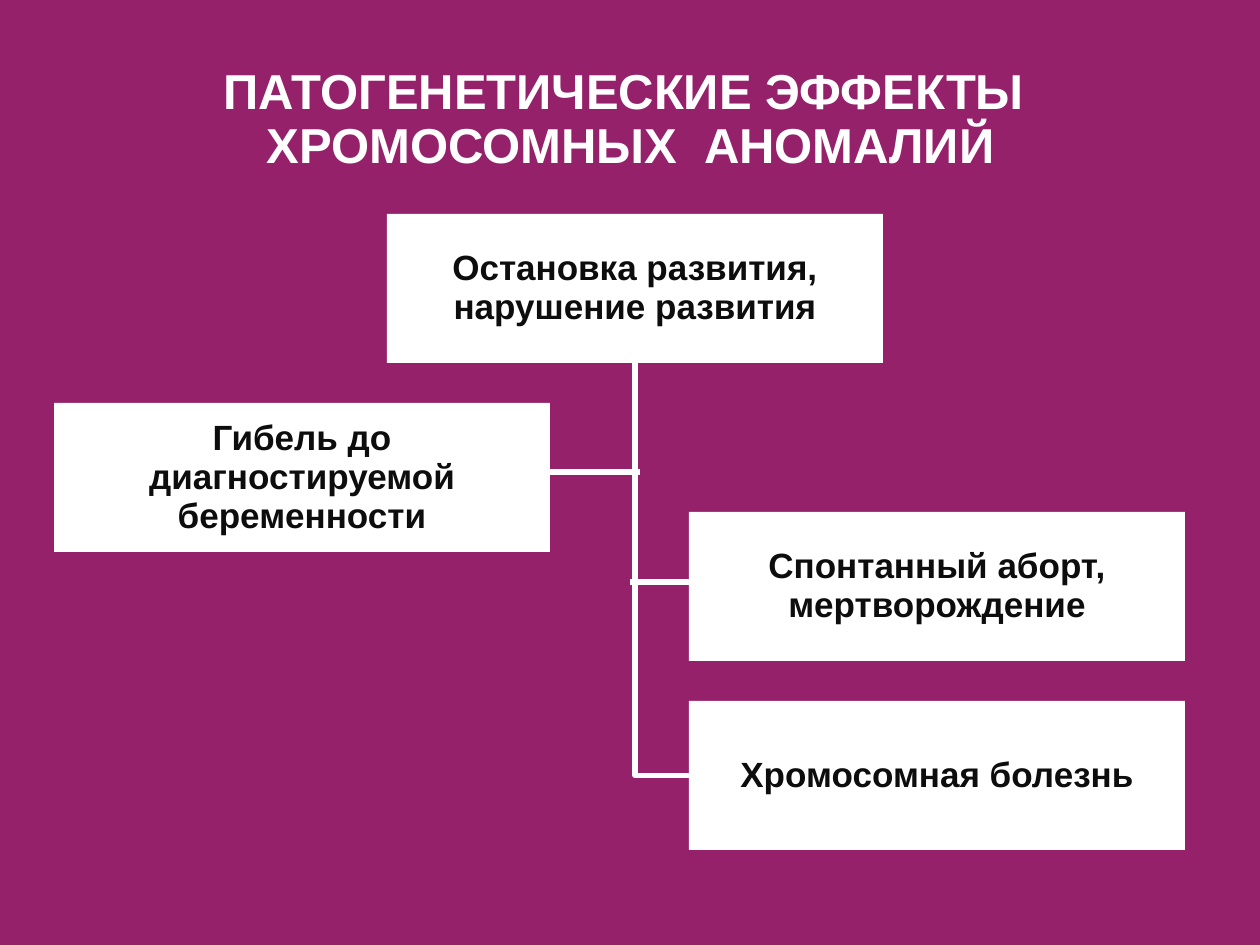
import pptx
import pptx.util
import pptx.dml.color
import pptx.enum.shapes
import pptx.enum.text
import pptx.oxml.ns
import pptx.oxml.xmlchemy

PX = 914400 // 126
COLORS = {"background": "96216B", "light": "FFFFFF", "text": "0D0D0D"}
BOX_WIDTH, BOX_HEIGHT = 496, 149


def px(length):
    return pptx.util.Emu(length * PX)


def rgb(name):
    return pptx.dml.color.RGBColor.from_string(COLORS[name])


class Diagram:
    font_name = "Arial"
    line_spacing = 0.93
    line_width = pptx.util.Pt(3)

    def __init__(self, slide):
        self.slide = slide
        fill = slide.background.fill
        fill.solid()
        fill.fore_color.rgb = rgb("background")

    def format(self, paragraph, size, color):
        paragraph.alignment = pptx.enum.text.PP_ALIGN.CENTER
        paragraph.line_spacing = self.line_spacing
        paragraph.font.name = self.font_name
        paragraph.font.size = pptx.util.Pt(size)
        paragraph.font.bold = True
        paragraph.font.color.rgb = rgb(color)

    def title(self, text, left, top, width, height):
        heading = self.slide.shapes.title
        heading.left, heading.top = px(left), px(top)
        heading.width, heading.height = px(width), px(height)
        frame = heading.text_frame
        frame.text = text
        frame.word_wrap = False
        frame.auto_size = pptx.enum.text.MSO_AUTO_SIZE.SHAPE_TO_FIT_TEXT
        frame.vertical_anchor = pptx.enum.text.MSO_ANCHOR.TOP
        for paragraph in frame.paragraphs:
            self.format(paragraph, 28, "light")

    def box(self, text, left, top):
        outcome = self.slide.shapes.add_shape(
            pptx.enum.shapes.MSO_SHAPE.RECTANGLE,
            px(left), px(top), px(BOX_WIDTH), px(BOX_HEIGHT))
        outcome.shadow.inherit = False
        outcome.fill.solid()
        outcome.fill.fore_color.rgb = rgb("light")
        outcome.line.fill.background()
        frame = outcome.text_frame
        frame.text = text
        frame.word_wrap = True
        frame.vertical_anchor = pptx.enum.text.MSO_ANCHOR.MIDDLE
        paragraph = frame.paragraphs[0]
        self.format(paragraph, 20, "text")
        paragraph.space_after = pptx.util.Pt(10)
        return outcome

    def connector(self, kind, start_x, start_y, end_x, end_y):
        link = self.slide.shapes.add_connector(kind, start_x, start_y, end_x, end_y)
        link.line.color.rgb = rgb("light")
        link.line.width = self.line_width
        link.element.spPr.append(pptx.oxml.xmlchemy.OxmlElement("a:effectLst"))
        return link

    def branch(self, start_x, end_x, y):
        self.connector(pptx.enum.shapes.MSO_CONNECTOR.STRAIGHT,
                       px(start_x), px(y), px(end_x), px(y))

    def trunk(self, source, target):
        start_x, start_y = source.left + source.width // 2, source.top + source.height
        end_x, end_y = target.left, target.top + target.height // 2
        link = self.connector(pptx.enum.shapes.MSO_CONNECTOR.ELBOW,
                              start_x, start_y, end_x, end_y)
        link.begin_connect(source, 2)
        link.end_connect(target, 1)
        link.width, link.height = end_y - start_y, end_x - start_x
        link.left = (start_x + end_x - link.width) // 2
        link.top = (start_y + end_y - link.height) // 2
        properties = link.element.spPr
        properties.find(pptx.oxml.ns.qn("a:prstGeom")).set("prst", "bentConnector2")
        transform = properties.find(pptx.oxml.ns.qn("a:xfrm"))
        transform.set("rot", str(270 * 60000))
        transform.set("flipH", "1")


def main():
    presentation = pptx.Presentation()
    presentation.slide_width = pptx.util.Inches(10)
    presentation.slide_height = pptx.util.Inches(7.5)
    diagram = Diagram(presentation.slides.add_slide(presentation.slide_layouts[5]))

    diagram.title("ПАТОГЕНЕТИЧЕСКИЕ ЭФФЕКТЫ \nХРОМОСОМНЫХ  АНОМАЛИЙ", 35, 59, 1191, 149)
    diagram.box("Гибель до диагностируемой беременности", 54, 403)
    arrest = diagram.box("Остановка развития, нарушение развития", 387, 214)
    diagram.box("Спонтанный аборт, мертворождение", 689, 512)
    disease = diagram.box("Хромосомная болезнь", 689, 701)

    diagram.trunk(arrest, disease)
    diagram.branch(520, 640, 472)
    diagram.branch(630, 749, 582)
    presentation.save("out.pptx")


if __name__ == "__main__":
    main()
